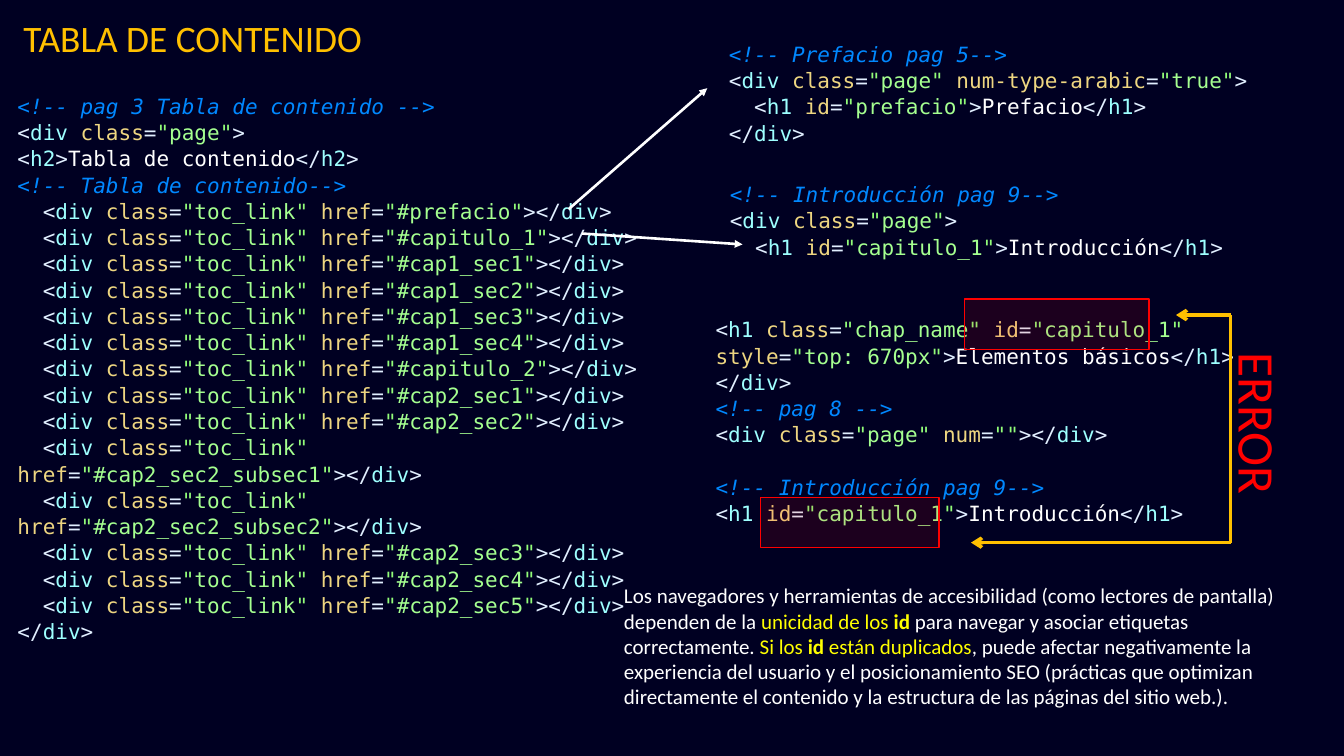
from dataclasses import dataclass
from itertools import groupby
from typing import Iterator, NamedTuple

from lxml import etree
from pptx import Presentation
from pptx.dml.color import RGBColor
from pptx.enum.shapes import MSO_CONNECTOR, MSO_SHAPE
from pptx.enum.text import MSO_AUTO_SIZE
from pptx.oxml.ns import qn
from pptx.slide import Slide
from pptx.util import Inches, Pt

RECT = MSO_SHAPE.RECTANGLE
LINE = MSO_CONNECTOR.STRAIGHT
GROW = MSO_AUTO_SIZE.SHAPE_TO_FIT_TEXT
COLS, ROWS = 160, 90
CELL = Inches(16) // COLS


@dataclass(frozen=True)
class Theme:
    back: str = "000022"
    note: str = "0088FF"
    punct: str = "E1EFFF"
    tag: str = "9EFFFF"
    attr: str = "EED681"
    quote: str = "92FC79"
    value: str = "A5FF90"
    plain: str = "FFFFFF"
    gold: str = "FFC000"
    stress: str = "FFFF00"
    error: str = "FF0000"
    mono: str = "DejaVu Sans Mono"
    sans: str = "Calibri"
    body: float = 18
    title: float = 32
    alarm: float = 44
    pitch: float = 22.5
    tint: int = 11000


THEME = Theme()


class Box(NamedTuple):
    """Left, top, width and height in columns and rows."""
    left: float
    top: float
    width: float
    height: float


class Span(NamedTuple):
    text: str
    color: str
    bold: bool = False
    slant: bool = False


class Code(NamedTuple):
    box: Box
    text: str


class Prose(NamedTuple):
    box: Box
    spans: list[Span]
    size: float
    wrap: bool = False
    turn: float = 0


class Arrow(NamedTuple):
    start: tuple[float, float]
    end: tuple[float, float]
    color: str
    width: float
    tip: str = ""


ANCHORS = ("prefacio capitulo_1 cap1_sec1 cap1_sec2 cap1_sec3 cap1_sec4 capitulo_2 "
           "cap2_sec1 cap2_sec2 cap2_sec2_subsec1 cap2_sec2_subsec2 "
           "cap2_sec3 cap2_sec4 cap2_sec5").split()
LINKS = "\n".join(f'  <div class="toc_link" href="#{name}"></div>' for name in ANCHORS)

CODES = [
    Code(Box(1.1, 10.5, 81.2, 62.1), f"""<!-- pag 3 Tabla de contenido -->
<div class="page">
<h2>Tabla de contenido</h2>
<!-- Tabla de contenido-->
{LINKS}
</div>"""),
    Code(Box(85.8, 4.3, 68.3, 13.8), """<!-- Prefacio pag 5-->
<div class="page" num-type-arabic="true">
  <h1 id="prefacio">Prefacio</h1>
</div>"""),
    Code(Box(85.9, 21, 67.1, 10.5), """<!-- Introducción pag 9-->
<div class="page">
  <h1 id="capitulo_1">Introducción</h1>"""),
    Code(Box(84.2, 37.1, 66.2, 26.7), """<h1 class="chap_name" id="capitulo_1"
style="top: 670px">Elementos básicos</h1>
</div>
<!-- pag 8 -->
<div class="page" num=""></div>

<!-- Introducción pag 9-->
<h1 id="capitulo_1">Introducción</h1>"""),
]

MARKS = [Box(114.8, 35.6, 22, 6), Box(90.5, 59.2, 21.3, 6)]

ARROWS = [
    Arrow((146.5, 37.5), (146.5, 64.6), THEME.gold, 3),
    Arrow((146.6, 37.5), (140, 37.5), THEME.gold, 3, "arrow"),
    Arrow((146.5, 64.6), (115.6, 64.6), THEME.gold, 3, "arrow"),
    Arrow((67.7, 24.9), (84.2, 10.5), THEME.plain, 2.25, "triangle"),
    Arrow((69.3, 27.8), (88.4, 29.1), THEME.plain, 2.25, "triangle"),
]

PROSE = [
    Prose(Box(73.3, 68.9, 81.2, 16.2), [
        Span("Los navegadores y herramientas de accesibilidad (como lectores de pantalla) "
             "dependen de la ", THEME.plain),
        Span("unicidad de los ", THEME.stress),
        Span("id ", THEME.stress, bold=True),
        Span("para navegar y asociar etiquetas correctamente. ", THEME.plain),
        Span("Si los ", THEME.stress),
        Span("id", THEME.stress, bold=True),
        Span(" están duplicados", THEME.stress),
        Span(", puede afectar negativamente la experiencia del usuario y el posicionamiento "
             "SEO (prácticas que optimizan directamente el contenido y la estructura de las "
             "páginas del sitio web.).", THEME.plain),
    ], THEME.body, wrap=True),
    Prose(Box(1.8, 1.3, 42.8, 6.4), [Span("TABLA DE CONTENIDO", THEME.gold)], THEME.title),
    Prose(Box(140.3, 46.3, 19.1, 8.4), [Span("ERROR", THEME.error)], THEME.alarm, turn=90),
]


def cells(*counts: float) -> list[int]:
    return [round(count * CELL) for count in counts]


def hues(line: str) -> Iterator[tuple[str, str]]:
    """Pair each character of a markup line with its syntax colour."""
    mode = THEME.plain if line.lstrip().startswith("<") else THEME.attr
    for char in line:
        hue = mode
        if char == '"':
            mode = THEME.attr if mode == THEME.value else THEME.value
            hue = THEME.quote
        elif mode != THEME.value and char in "<>/=":
            mode = {"<": THEME.tag, ">": THEME.plain}.get(char, mode)
            hue = THEME.punct
        elif mode == THEME.tag and char == " ":
            mode = THEME.attr
        yield char, hue


def lex(line: str) -> list[Span]:
    if line.startswith("<!--"):
        return [Span(line, THEME.note, slant=True)]
    return [Span("".join(char for char, _ in part), hue)
            for hue, part in groupby(hues(line), key=lambda pair: pair[1])]


def add_text(slide: Slide, box: Box, wrap: bool = True):
    shape = slide.shapes.add_textbox(*cells(*box))
    shape.text_frame.word_wrap = wrap
    shape.text_frame.auto_size = GROW
    return shape


def fill_line(para, spans: list[Span], face: str, size: float) -> None:
    para.font.name, para.font.size = face, Pt(size)
    for span in spans:
        run = para.add_run()
        run.text = span.text
        run.font.color.rgb = RGBColor.from_string(span.color)
        if span.bold:
            run.font.bold = True
        if span.slant:
            run.font.italic = True


def add_code(slide: Slide, code: Code) -> None:
    """Write markup; an empty line becomes space before the next one."""
    frame = add_text(slide, code.box).text_frame
    gap = False
    for row, line in enumerate(code.text.split("\n")):
        if not line:
            gap = True
            continue
        para = frame.add_paragraph() if row else frame.paragraphs[0]
        para.line_spacing = Pt(THEME.pitch)
        if gap:
            para.space_before = Pt(THEME.pitch)
            gap = False
        fill_line(para, lex(line), THEME.mono, THEME.body)


def add_prose(slide: Slide, prose: Prose) -> None:
    shape = add_text(slide, prose.box, prose.wrap)
    shape.rotation = prose.turn
    fill_line(shape.text_frame.paragraphs[0], prose.spans, THEME.sans, prose.size)


def add_mark(slide: Slide, box: Box) -> None:
    shape = slide.shapes.add_shape(RECT, *cells(*box))
    shape.shadow.inherit = False
    shape.fill.solid()
    shape.fill.fore_color.rgb = shape.line.color.rgb = RGBColor.from_string(THEME.error)
    shape.line.width = Pt(1)
    hue = shape.element.spPr.find(qn("a:solidFill")).find(qn("a:srgbClr"))
    etree.SubElement(hue, qn("a:alpha"), val=str(THEME.tint))


def add_arrow(slide: Slide, arrow: Arrow) -> None:
    link = slide.shapes.add_connector(LINE, *cells(*arrow.start, *arrow.end))
    link.line.color.rgb = RGBColor.from_string(arrow.color)
    link.line.width = Pt(arrow.width)
    props = link.element.spPr
    if arrow.tip:
        etree.SubElement(props.find(qn("a:ln")), qn("a:tailEnd"), type=arrow.tip)
    etree.SubElement(props, qn("a:effectLst"))


def main() -> None:
    deck = Presentation()
    deck.slide_width, deck.slide_height = cells(COLS, ROWS)
    slide = deck.slides.add_slide(deck.slide_layouts[6])
    slide.background.fill.solid()
    slide.background.fill.fore_color.rgb = RGBColor.from_string(THEME.back)
    for draw, items in ((add_code, CODES), (add_mark, MARKS),
                        (add_arrow, ARROWS), (add_prose, PROSE)):
        for item in items:
            draw(slide, item)
    deck.save("out.pptx")


if __name__ == "__main__":
    main()
